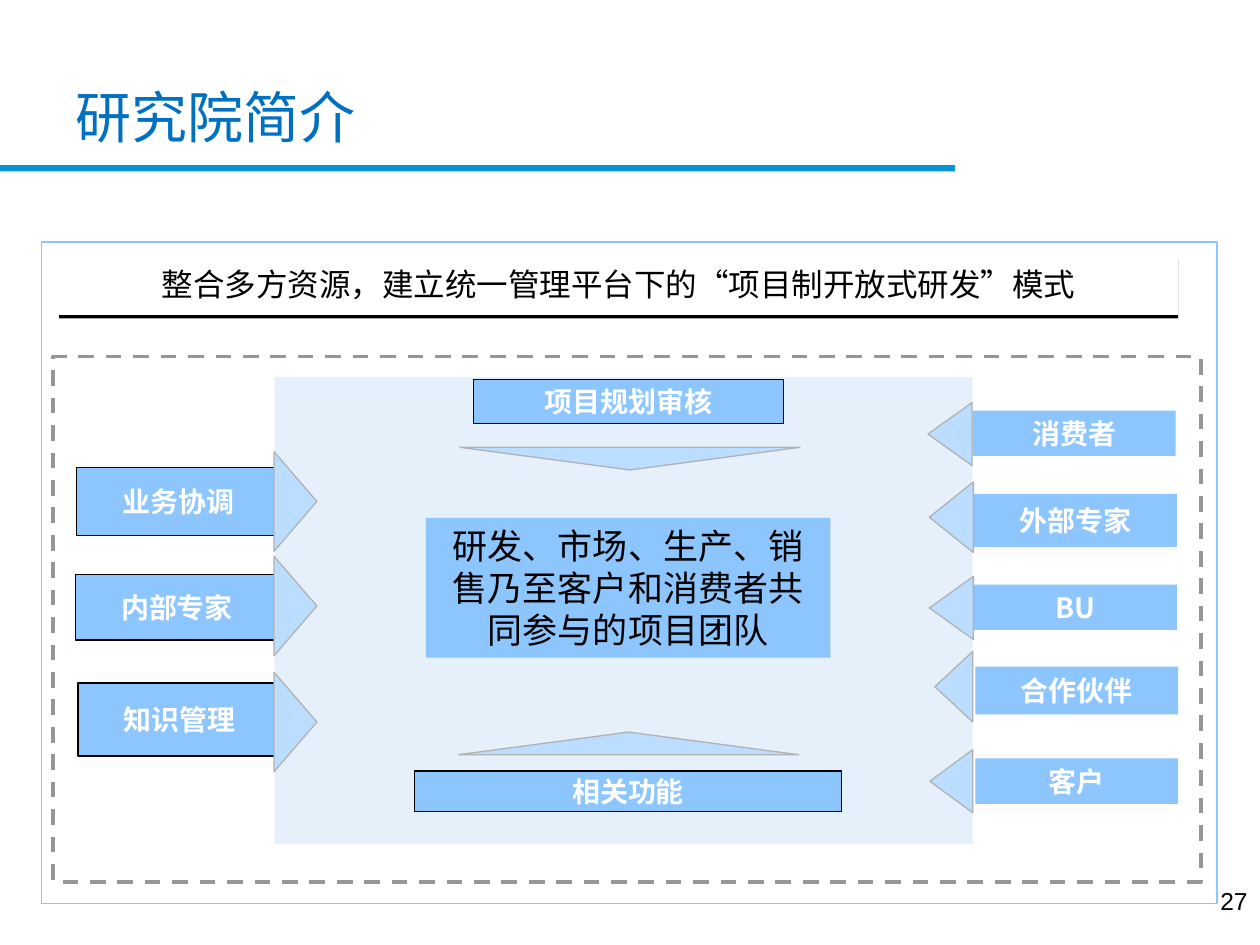
from dataclasses import dataclass

from lxml import etree
from pptx import Presentation
from pptx.dml.color import RGBColor as RGB
from pptx.enum.dml import MSO_LINE_DASH_STYLE as Dash
from pptx.enum.shapes import MSO_SHAPE as Kind
from pptx.enum.text import MSO_ANCHOR as Anchor, PP_ALIGN as Align
from pptx.oxml.ns import qn
from pptx.util import Inches, Pt


@dataclass(frozen=True)
class Theme:
    white: str = "FFFFFF"
    black: str = "000000"
    bar: str = "0595D4"
    title: str = "0070C0"
    panel: str = "E5F0FA"
    box: str = "8DC6FF"
    arrow: str = "BBDDFF"
    edge: str = "B2B2B2"
    dash: str = "969696"
    cjk: str = "Noto Sans CJK SC"
    latin: str = "Arial"
    head: int = 32
    core: int = 20
    lead: int = 18
    label: int = 16
    page: int = 14


T = Theme()
prs = Presentation()
prs.slide_width, prs.slide_height = Inches(10), Inches(7.5)
slide = prs.slides.add_slide(prs.slide_layouts[6])


def draw(at, fill=None, line=None, width=0.75, kind=Kind.RECTANGLE, turn=0):
    shape = slide.shapes.add_shape(kind, *map(Inches, at))
    shape.shadow.inherit = False
    shape.rotation = turn
    if fill:
        shape.fill.solid()
        shape.fill.fore_color.rgb = RGB.from_string(fill)
    else:
        shape.fill.background()
    if line:
        shape.line.color.rgb = RGB.from_string(line)
        shape.line.width = Pt(width)
    else:
        shape.line.fill.background()
    return shape


def write(shape, text, size, color=T.black, font=T.cjk, bold=False,
          align=Align.CENTER, anchor=Anchor.MIDDLE, pad=(0.1, 0.05), wrap=True):
    """Put one run in the shape; pad is the side and the top inset."""
    frame = shape.text_frame
    frame.word_wrap = wrap
    frame.vertical_anchor = anchor
    frame.margin_left = frame.margin_right = Inches(pad[0])
    frame.margin_top = frame.margin_bottom = Inches(pad[1])
    par = frame.paragraphs[0]
    par.alignment = align
    run = par.add_run()
    run.text = text
    run.font.size = Pt(size)
    run.font.bold = bold
    run.font.name = font
    run.font.color.rgb = RGB.from_string(color)
    if font == T.cjk:
        east = etree.SubElement(run.font._element, qn("a:ea"))
        east.set("typeface", font)
    return par


# Title bar and main panels
draw((0, 1.31, 7.58, 0.05), T.bar)
zone = draw((0.42, 2.83, 9.11, 4.17), T.white, T.dash, 2.25)
zone.line.dash_style = Dash.DASH
draw((2.18, 2.99, 5.54, 3.71), T.panel)

# Lead sentence, underlined by a hard shadow
lead = draw((0.47, 2.03, 8.88, 0.47), T.white)
write(lead, "整合多方资源，建立统一管理平台下的“项目制开放式研发”模式", T.lead,
      anchor=Anchor.BOTTOM, pad=(0.1, 0.1))
glow = lead._element.spPr.find(qn("a:effectLst"))
cast = etree.SubElement(glow, qn("a:outerShdw"), dist=str(Pt(2)),
                        dir="5400000", algn="ctr", rotWithShape="0")
etree.SubElement(cast, qn("a:srgbClr"), val=T.black)

# Inputs from the left: label, box left, top and height, arrow middle
for text, left, top, high, mid in (
    ("业务协调", 0.61, 3.71, 0.54, 3.98),
    ("内部专家", 0.6, 4.56, 0.52, 4.81),
    ("知识管理", 0.62, 5.42, 0.58, 5.73),
):
    box = draw((left, top, 1.61, high), T.box, T.black)
    write(box, text, T.label, T.white, bold=True, pad=(0.05, 0.1))
    draw((1.95, mid - 0.17, 0.79, 0.34), T.arrow, T.edge,
         kind=Kind.ISOSCELES_TRIANGLE, turn=90)

# Inputs from the right: label, box left, top and height, arrow frame
for text, left, top, high, tip in (
    ("消费者", 7.72, 3.26, 0.36, (7.29, 3.27, 0.5, 0.35)),
    ("外部专家", 7.73, 3.92, 0.42, (7.27, 3.93, 0.56, 0.35)),
    ("BU", 7.73, 4.64, 0.36, (7.3, 4.65, 0.5, 0.35)),
    ("合作伙伴", 7.74, 5.29, 0.38, (7.29, 5.3, 0.56, 0.3)),
    ("客户", 7.74, 6.02, 0.36, (7.3, 6.03, 0.5, 0.34)),
):
    box = draw((left, top, 1.61, high), T.box)
    write(box, text, T.label, T.white, bold=True, pad=(0, 0.1))
    draw(tip, T.arrow, T.edge, kind=Kind.ISOSCELES_TRIANGLE, turn=270)

# Inputs from above and below
for text, at, tip, turn in (
    ("项目规划审核", (3.76, 3.01, 2.46, 0.35), (3.65, 3.55, 2.7, 0.18), 180),
    ("相关功能", (3.29, 6.12, 3.39, 0.32), (3.64, 5.81, 2.7, 0.18), 0),
):
    box = draw(at, T.box, T.black)
    write(box, text, T.label, T.white, bold=True, pad=(0, 0), wrap=False)
    draw(tip, T.arrow, T.edge, kind=Kind.ISOSCELES_TRIANGLE, turn=turn)

# Project team in the middle
core = draw((3.38, 4.11, 3.21, 1.11), T.box)
team = write(core, "研发、市场、生产、销售乃至客户和消费者共同参与的项目团队", T.core)
team.line_spacing = Pt(24)

# Title, page number and outer frame
title = slide.shapes.add_textbox(*map(Inches, (0.5, 0.3, 9, 1.25)))
write(title, "研究院简介", T.head, T.title, T.latin, align=Align.LEFT)
page = slide.shapes.add_textbox(*map(Inches, (7.67, 6.98, 2.33, 0.52)))
write(page, "27", T.page, font=T.latin, align=Align.RIGHT, anchor=Anchor.TOP)
draw((0.33, 1.92, 9.33, 5.25), line=T.box)

prs.save("out.pptx")
